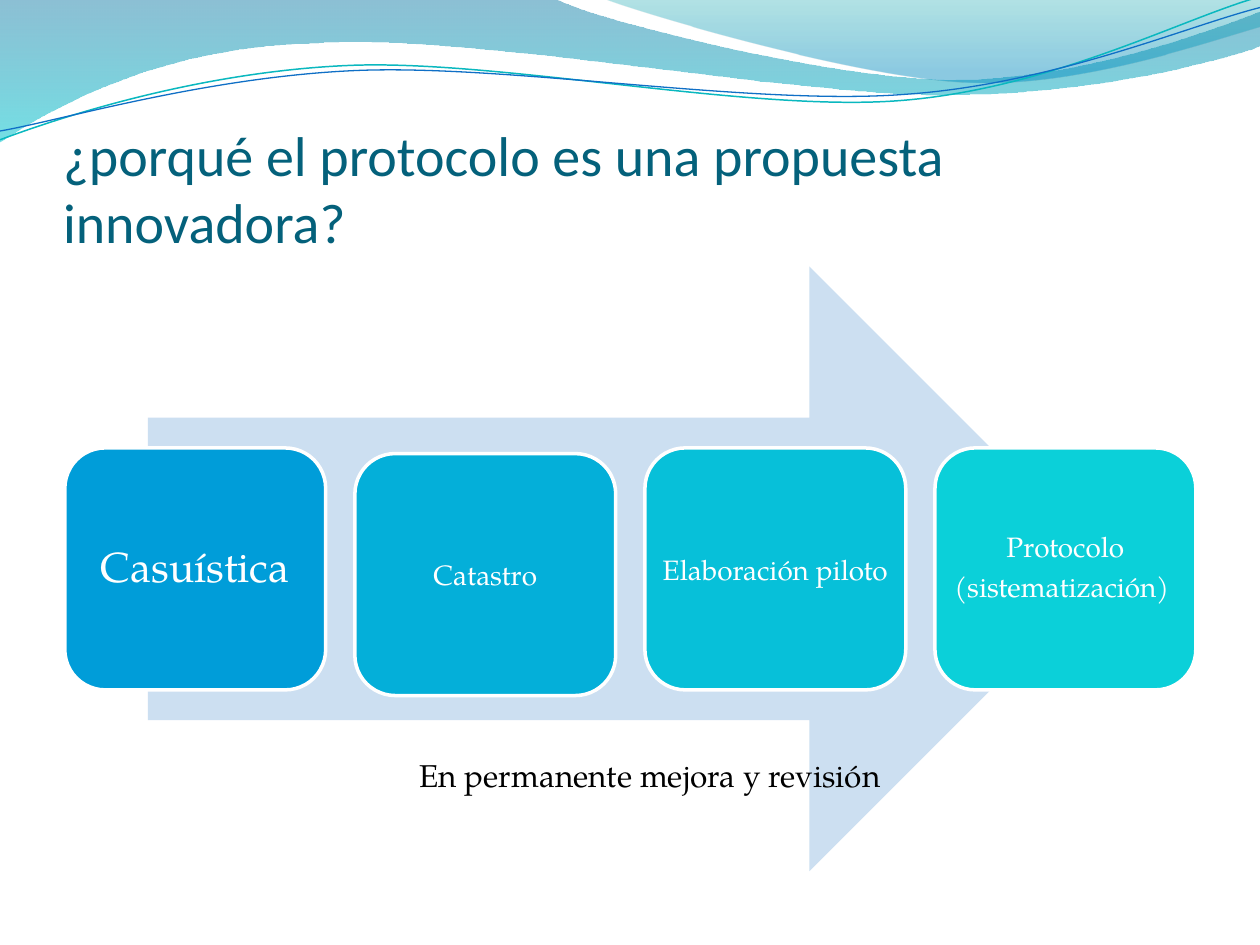
from lxml import etree
from pptx import Presentation
from pptx import util as u
from pptx.dml.color import RGBColor
from pptx.enum import shapes, text
from pptx.oxml.ns import qn

SERIF = "TeX Gyre Pagella"

deck = Presentation()
deck.slide_width, deck.slide_height = u.Inches(10), u.Inches(7.5)
page = deck.slides.add_slide(deck.slide_layouts[5])


def place(left, top, width, height):
    """Turn percentages of the slide into left, top, width and height."""
    across, down = deck.slide_width / 100, deck.slide_height / 100
    return [u.Emu(round(share * side)) for share, side in
            zip((left, top, width, height), (across, down, across, down))]


def paint(fill, color):
    fill.solid()
    fill.fore_color.rgb = RGBColor.from_string(color)


# Waves in inches: a start, then pieces of one point (line) or three (curve);
# gradient stops are position, colour, opacity; an outline is colour, points
waves = [
    ((0, 0), [[(4.4, -0.01)],
              [(4.76, 0.17), (6.64, 0.63), (7.58, 0.63)],
              [(8.53, 0.63), (9.58, 0.26), (10, 0.09)],
              [(10.01, 0.36)],
              [(9.83, 0.44), (8.7, 0.76), (7.46, 0.75)],
              [(6.22, 0.75), (3.82, 0.28), (2.57, 0.34)],
              [(1.29, 0.36), (0.46, 0.83), (-0.01, 1.13)]],
     [(0, "0074A1", 45), (1, "00C6CF", 55)], None),
    ((4.79, -0.01), [[(5.09, 0.11), (6.82, 0.62), (7.69, 0.65)],
                     [(8.56, 0.69), (9.61, 0.32), (10, 0.21)],
                     [(10, 0)]],
     [(0, "00A1A9", 30), (0.8, "008BBF", 45)], None),
    ((0, 1.11), [[(0.48, 0.93), (1.58, 0.57), (2.77, 0.52)],
                 [(3.95, 0.47), (5.93, 0.89), (7.13, 0.8)],
                 [(8.33, 0.71), (9.38, 0.15), (9.98, -0.02)]],
     None, ("0AB8BF", 0.85)),
    ((0, 1.04), [[(0.47, 0.96), (1.64, 0.61), (2.83, 0.56)],
                 [(4.03, 0.51), (5.97, 0.84), (7.17, 0.75)],
                 [(8.36, 0.67), (9.41, 0.21), (10, 0.06)]],
     None, ("0F6FC6", 0.75)),
]
for start, pieces, stops, outline in waves:
    points = [(u.Inches(x), u.Inches(y)) for piece in pieces for x, y in piece]
    builder = page.shapes.build_freeform(u.Inches(start[0]), u.Inches(start[1]))
    builder.add_line_segments(points, close=stops is not None)
    wave = builder.convert_to_shape()
    wave.shadow.inherit = False

    # Join each three segments of a curved piece into one Bézier curve
    segments = iter(list(wave.element.spPr.iter(qn("a:lnTo"))))
    for piece in pieces:
        group = [next(segments) for _ in piece]
        if len(group) == 3:
            curve = etree.Element(qn("a:cubicBezTo"))
            group[0].addprevious(curve)
            for segment in group:
                curve.append(segment[0])
                segment.getparent().remove(segment)

    if stops:
        wave.line.fill.background()
        wave.fill.gradient()
        wave.fill.gradient_angle = 270
        for stop, (position, color, _) in zip(wave.fill.gradient_stops, stops):
            stop.position = position
            stop.color.rgb = RGBColor.from_string(color)
        for tint, (_, _, opacity) in zip(wave.element.spPr.iter(qn("a:srgbClr")), stops):
            etree.SubElement(tint, qn("a:alpha")).set("val", str(opacity * 1000))
    else:
        wave.fill.background()
        paint(wave.line.fill, outline[0])
        wave.line.width = u.Pt(outline[1])

title = page.shapes.title
title.left, title.top, title.width, title.height = place(5, 10.3, 90, 16.7)
frame = title.text_frame
frame.auto_size = text.MSO_AUTO_SIZE.NONE
frame.vertical_anchor = text.MSO_ANCHOR.BOTTOM
frame.margin_left = frame.margin_right = frame.margin_bottom = 0
frame.margin_top = u.Inches(0.05)
para = frame.paragraphs[0]
para.alignment = text.PP_ALIGN.LEFT
span = para.add_run()
span.text = "¿porqué el protocolo es una propuesta innovadora?"
span.font.size, span.font.name = u.Pt(32), "Calibri"
paint(span.font.fill, "04617B")

arrow = page.shapes.add_shape(shapes.MSO_SHAPE.RIGHT_ARROW, *place(11.74, 28.2, 76.5, 64))
arrow.shadow.inherit = False
paint(arrow.fill, "CCDFF1")
arrow.line.fill.background()

# Lines, text size, line spacing, fill, top
stages = [
    (["Casuística"], 24, 0.9, "009DD9", 47.4),
    (["Catastro"], 16, 1, "04AFD9", 48),
    (["Elaboración piloto"], 16, 1, "07C0D9", 47.4),
    (["Protocolo", "(sistematización) "], 16, 0.9, "0BD0D9", 47.4),
]
for column, (lines, size, spacing, color, top) in enumerate(stages):
    box = page.shapes.add_shape(shapes.MSO_SHAPE.ROUNDED_RECTANGLE,
                                *place(5.15 + 23.02 * column, top, 20.7, 25.6))
    box.shadow.inherit = False
    paint(box.fill, color)
    paint(box.line.fill, "FFFFFF")
    box.line.width = u.Pt(2)
    frame = box.text_frame
    frame.word_wrap = True
    frame.vertical_anchor = text.MSO_ANCHOR.MIDDLE
    frame.margin_left = frame.margin_right = 0
    for index, line in enumerate(lines):
        para = frame.add_paragraph() if index else frame.paragraphs[0]
        para.alignment = text.PP_ALIGN.CENTER
        para.line_spacing = spacing
        para.space_before = u.Pt(5.6 if index else 0)
        span = para.add_run()
        span.text = line
        span.font.size, span.font.name = u.Pt(size), SERIF
        paint(span.font.fill, "FFFFFF")

caption = page.shapes.add_textbox(*place(15.4, 79.3, 72.4, 5.3))
frame = caption.text_frame
frame.word_wrap = True
para = frame.paragraphs[0]
para.alignment = text.PP_ALIGN.CENTER
span = para.add_run()
span.text = "En permanente mejora y revisión"
span.font.size, span.font.name = u.Pt(18), SERIF
paint(span.font.fill, "000000")

deck.save("out.pptx")
